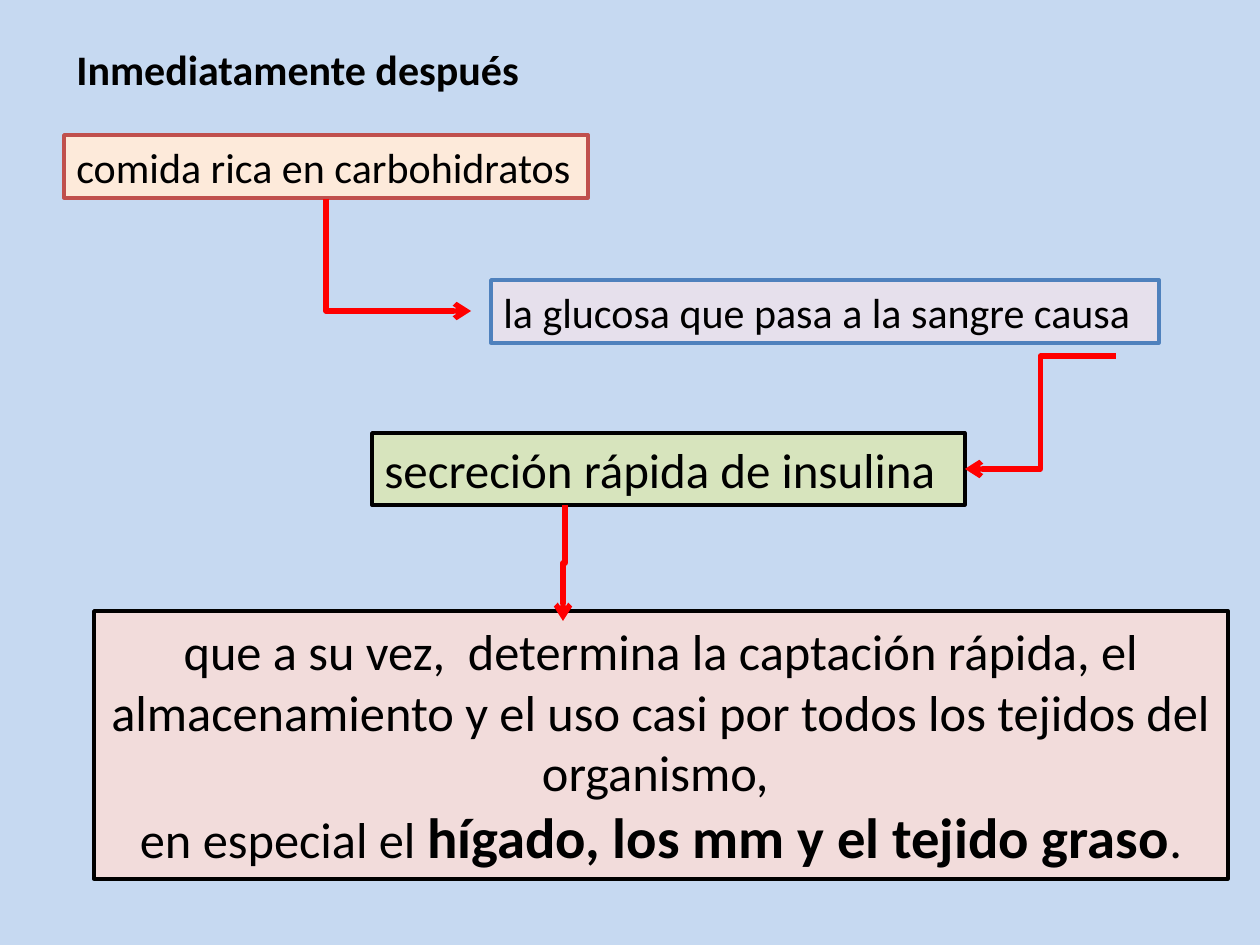
from lxml import etree
from pptx import Presentation
from pptx import util as u
from pptx.dml.color import RGBColor
from pptx.enum import shapes, text
from pptx.oxml.ns import qn

SCALE = 914400 // 126  # EMU per px
FONT = "Calibri"
BLACK = "000000"
RED = "FF0000"


def px(length):
    return u.Emu(round(length * SCALE))


def colour(hex_string):
    return RGBColor.from_string(hex_string)


def format_run(run, size, bold=False):
    run.font.name = FONT
    run.font.size = u.Pt(size)
    run.font.bold = bold
    run.font.color.rgb = colour(BLACK)


def add_box(slide, box, wording, size, fill=None, line=None, bold=False):
    """Place a text box, with a fill and outline where given."""
    shape = slide.shapes.add_textbox(*map(px, box))
    if fill:
        shape.fill.solid()
        shape.fill.fore_color.rgb = colour(fill)
    if line:
        shape.line.color.rgb = colour(line)
        shape.line.width = u.Pt(2)
    shape.text_frame.word_wrap = True
    shape.text_frame.text = wording
    for run in shape.text_frame.paragraphs[0].runs:
        format_run(run, size, bold)
    return shape


def add_conclusion(slide, box):
    """Place the large closing statement with its emphasised ending."""
    shape = add_box(
        slide, box,
        "que a su vez,  determina la captación rápida, el almacenamiento "
        "y el uso casi por todos los tejidos del organismo, \v"
        "en especial el ",
        28.8, "F2DCDB", BLACK)
    shape.text_frame.vertical_anchor = text.MSO_ANCHOR.MIDDLE
    paragraph = shape.text_frame.paragraphs[0]
    paragraph.alignment = text.PP_ALIGN.CENTER
    for wording, size, bold in (("hígado, los mm y el tejido graso", 32.4, True),
                                (".", 28.8, False)):
        run = paragraph.add_run()
        run.text = wording
        format_run(run, size, bold)


def add_elbow(slide, start, end):
    """Draw a red elbow arrow that leaves its start horizontally."""
    connector = slide.shapes.add_connector(
        shapes.MSO_CONNECTOR.ELBOW, *map(px, start + end))
    connector.line.color.rgb = colour(RED)
    connector.line.width = u.Pt(3)
    etree.SubElement(connector.line._get_or_add_ln(), qn("a:tailEnd"), type="arrow")
    etree.SubElement(connector._element.spPr, qn("a:effectLst"))
    return connector


def add_descending_elbow(slide, start, end, preset="bentConnector3"):
    """Draw an elbow arrow that leaves downwards, by turning a horizontal one."""
    across, down = end[0] - start[0], end[1] - start[1]
    centre_x, centre_y = (start[0] + end[0]) / 2, (start[1] + end[1]) / 2
    to_right = across > 0
    half_run = -down / 2 if to_right else down / 2
    half_rise = abs(across) / 2
    connector = add_elbow(slide, (centre_x - half_run, centre_y - half_rise),
                          (centre_x + half_run, centre_y + half_rise))
    properties = connector._element.spPr
    properties.find(qn("a:xfrm")).set("rot", str((270 if to_right else 90) * 60000))
    properties.find(qn("a:prstGeom")).set("prst", preset)


def build_slide(slide):
    slide.background.fill.solid()
    slide.background.fill.fore_color.rgb = colour("C6D9F1")

    # Statements
    add_conclusion(slide, (94, 611, 1134, 268))
    add_box(slide, (64, 37, 483, 63), "Inmediatamente después", 24, bold=True)
    add_box(slide, (64, 135, 524, 63), "comida rica en carbohidratos", 24,
            "FDEADA", "C0504D")
    add_box(slide, (491, 280, 668, 63), "la glucosa que pasa a la sangre causa", 24,
            "E6E0EC", "4F81BD")
    add_box(slide, (372, 433, 593, 72), "secreción rápida de insulina", 28,
            "D7E4BD", BLACK)

    # Arrows from cause to effect
    add_descending_elbow(slide, (326, 199), (471, 311), "bentConnector2")
    add_elbow(slide, (1116, 356), (965, 469))
    add_descending_elbow(slide, (565, 505), (563, 621))


def main():
    presentation = Presentation()
    presentation.slide_width = px(1260)
    presentation.slide_height = px(945)
    build_slide(presentation.slides.add_slide(presentation.slide_layouts[6]))
    presentation.save("out.pptx")


if __name__ == "__main__":
    main()
